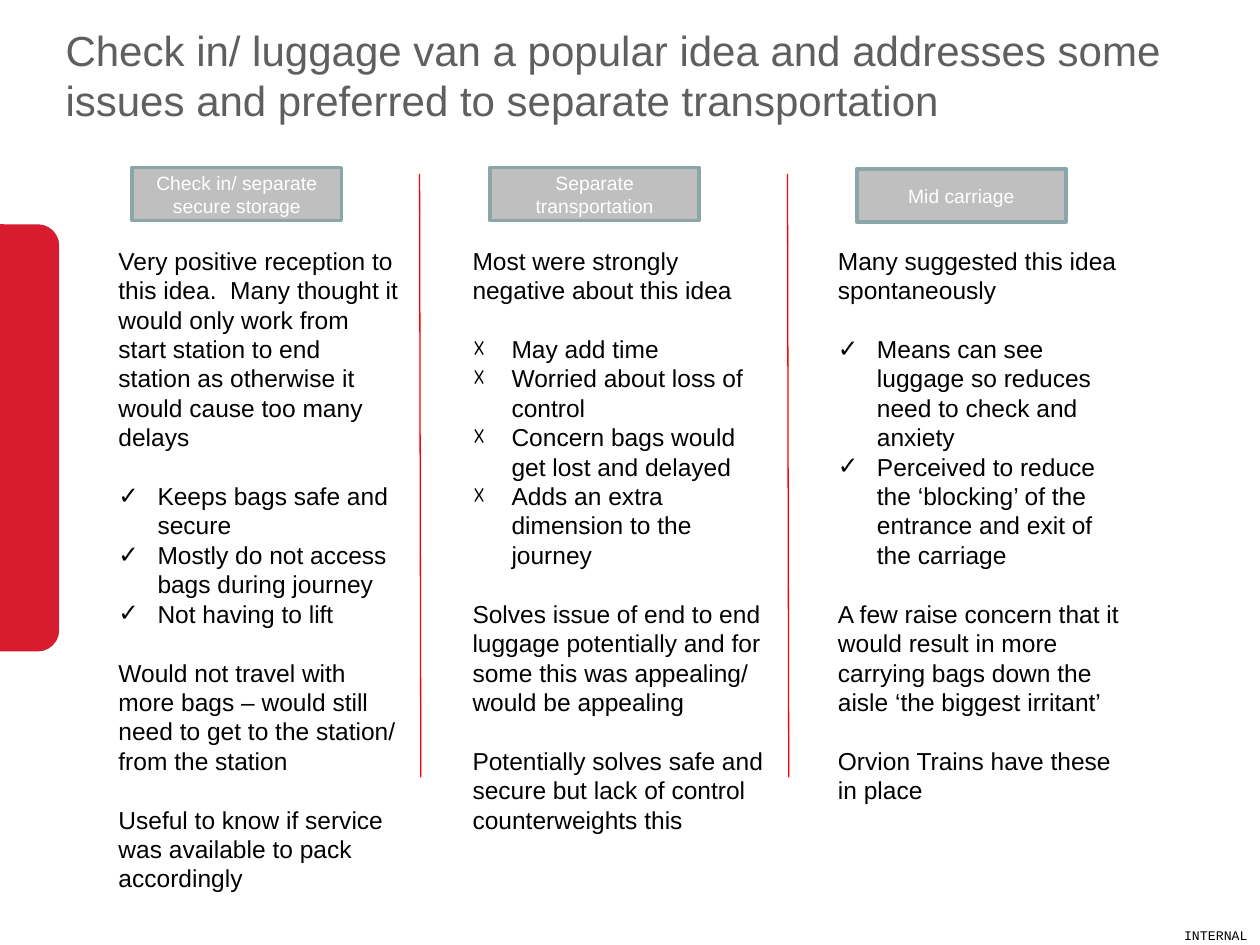
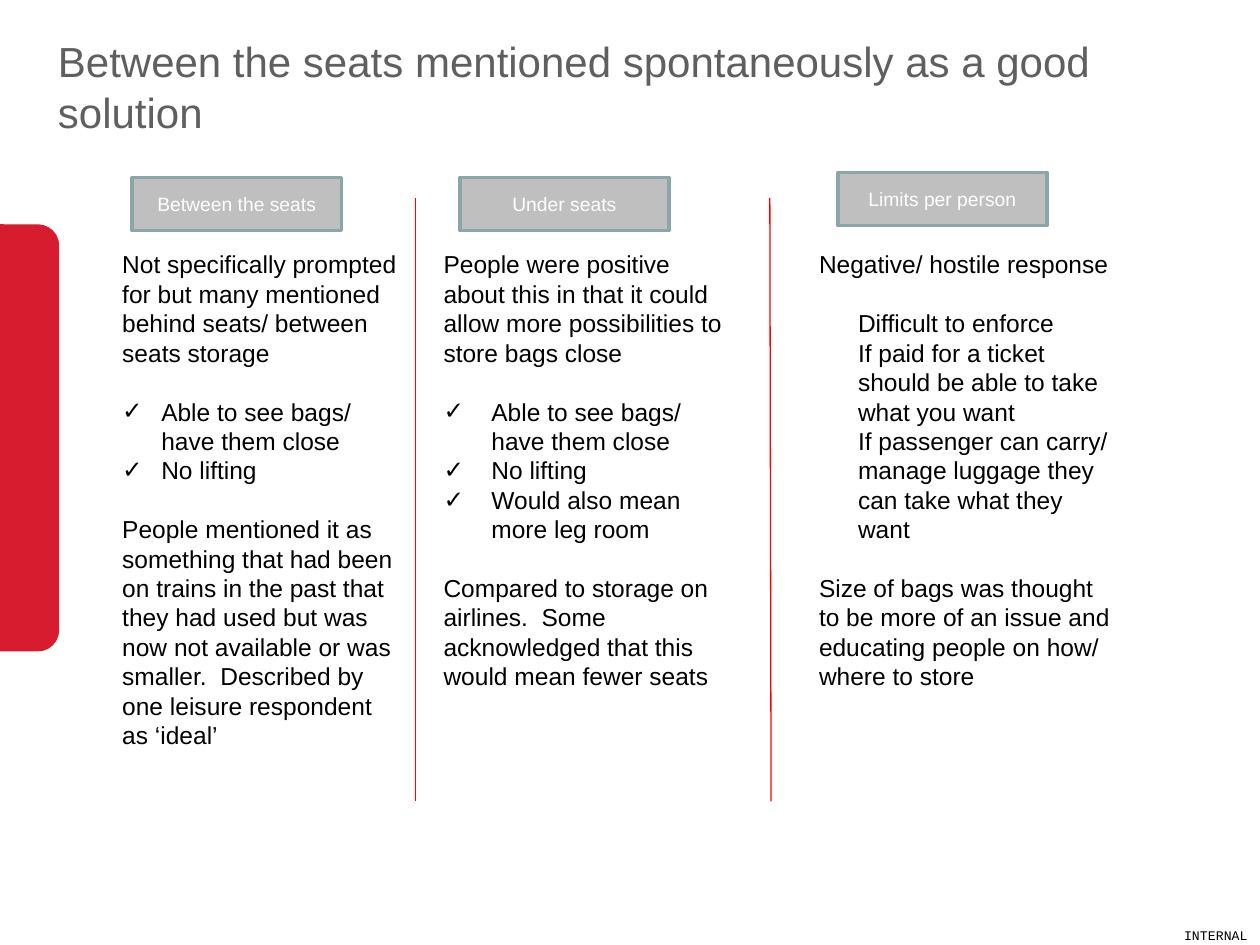
from dataclasses import dataclass

from lxml import etree
from pptx import Presentation
from pptx.dml.color import RGBColor
from pptx.enum import shapes, text
from pptx.oxml.ns import qn
from pptx.util import Inches, Pt


@dataclass(frozen=True)
class Theme:
    grey: str = "5F5F5F"
    black: str = "000000"
    white: str = "FFFFFF"
    red: str = "D61C2E"
    rule: str = "FF0000"
    label: str = "BFBFBF"
    border: str = "8AA6A8"
    sans: str = "Arial"
    mono: str = "Courier New"
    title: float = 24
    body: float = 14
    small: float = 11
    footer: float = 7.5
    leading: float = 1.2


@dataclass
class Points:
    items: list
    mark: str = ""
    indent: float = 0.31


@dataclass
class Column:
    label: str
    label_at: tuple
    body_at: tuple
    blocks: list


T = Theme()
LABEL_SIZE = (1.66, 0.42)
TICK, CROSS = "✓", "☓"


def rgb(value):
    return RGBColor.from_string(value)


def place(sp, x, y, w, h):
    sp.left, sp.top, sp.width, sp.height = (Inches(v) for v in (x, y, w, h))


def set_bullet(p, mark, indent):
    pPr = p._p.get_or_add_pPr()
    pPr.set("marL", str(Inches(indent)))
    pPr.set("indent", str(-Inches(indent) if mark else 0))
    if mark:
        etree.SubElement(pPr, qn("a:buFont")).set("typeface", T.sans)
        etree.SubElement(pPr, qn("a:buChar")).set("char", mark)
    else:
        etree.SubElement(pPr, qn("a:buNone"))


def write(tf, words, size=T.body, color=T.black, font=T.sans,
          align=text.PP_ALIGN.LEFT, mark="", indent=0, before=0):
    """Write one paragraph, using the empty first one if there is one."""
    p = tf.paragraphs[0] if not tf.text else tf.add_paragraph()
    set_bullet(p, mark, indent)
    p.alignment = align
    p.line_spacing = Pt(size * T.leading)
    p.space_before, p.space_after = Pt(before), Pt(0)
    r = p.add_run()
    r.text = words
    r.font.size, r.font.name, r.font.bold = Pt(size), font, False
    r.font.color.rgb = rgb(color)


def set_frame(tf, anchor):
    tf.word_wrap = True
    tf.auto_size = text.MSO_AUTO_SIZE.NONE
    tf.vertical_anchor = anchor


def add_block(slide, kind, at, fill, border=None):
    sp = slide.shapes.add_shape(kind, *(Inches(v) for v in at))
    sp.shadow.inherit = False
    sp.fill.solid()
    sp.fill.fore_color.rgb = rgb(fill)
    if border:
        sp.line.color.rgb, sp.line.width = rgb(border), Pt(2)
    else:
        sp.line.fill.background()
    return sp


def add_master_parts(prs, slide):
    """Draw the side band and footer, then move them to the slide master."""
    band = add_block(slide, shapes.MSO_SHAPE.ROUNDED_RECTANGLE,
                     (-0.55, 1.78, 1.02, 3.39), T.red)
    footer = slide.shapes.add_textbox(0, 0, 0, 0)
    place(footer, 0, 7.31, 10, 0.23)
    set_frame(footer.text_frame, text.MSO_ANCHOR.TOP)
    write(footer.text_frame, "INTERNAL", size=T.footer, font=T.mono,
          align=text.PP_ALIGN.RIGHT)
    for number, sp in enumerate((band, footer), start=20):
        sp._element.nvSpPr.cNvPr.set("id", str(number))
        prs.slide_master.shapes._spTree.append(sp._element)


def add_title(slide, words, x, y):
    sp = slide.shapes.title
    place(sp, x, y, 9, 1.01)
    set_frame(sp.text_frame, text.MSO_ANCHOR.MIDDLE)
    write(sp.text_frame, words, size=T.title, color=T.grey)


def add_column(slide, body, column):
    label = add_block(slide, shapes.MSO_SHAPE.RECTANGLE,
                      column.label_at + LABEL_SIZE, T.label, T.border)
    set_frame(label.text_frame, text.MSO_ANCHOR.MIDDLE)
    write(label.text_frame, column.label, size=T.small, color=T.white,
          align=text.PP_ALIGN.CENTER)

    place(body, *column.body_at)
    tf = body.text_frame
    set_frame(tf, text.MSO_ANCHOR.TOP)
    for i, block in enumerate(column.blocks):
        points = block if isinstance(block, Points) else Points([block], indent=0)
        for j, item in enumerate(points.items):
            gap = T.body * T.leading if i and not j else 0
            write(tf, item, mark=points.mark, indent=points.indent, before=gap)


def add_divider(slide, x, y, drift, height=4.79):
    line = slide.shapes.add_connector(
        shapes.MSO_CONNECTOR.STRAIGHT, Inches(x), Inches(y),
        Inches(x + drift), Inches(y + height))
    line.line.color.rgb, line.line.width = rgb(T.rule), Pt(0.75)
    etree.SubElement(line._element.spPr, qn("a:effectLst"))


def add_columns_slide(prs, title, title_at, columns, dividers):
    slide = prs.slides.add_slide(prs.slide_layouts.get_by_name("Comparison"))
    add_title(slide, title, *title_at)
    bodies = [sp for sp in slide.placeholders if sp.placeholder_format.idx]
    for body, column in zip(bodies, columns):
        add_column(slide, body, column)
    for spare in bodies[len(columns):]:
        spare._element.getparent().remove(spare._element)
    for divider in dividers:
        add_divider(slide, *divider)
    return slide


STORAGE = [
    Column("Check in/ separate secure storage", (1.05, 1.33), (0.84, 1.9, 2.43, 5.05), [
        "Very positive reception to this idea.  Many thought it would only work from "
        "start station to end station as otherwise it would cause too many delays",
        Points(["Keeps bags safe and secure",
                "Mostly do not access bags during journey",
                "Not having to lift"], TICK),
        "Would not travel with more bags – would still need to get to the station/ "
        "from the station",
        "Useful to know if service was available to pack accordingly"]),
    Column("Separate transportation", (3.89, 1.33), (3.65, 1.9, 2.53, 4.81), [
        "Most were strongly negative about this idea",
        Points(["May add time",
                "Worried about loss of control",
                "Concern bags would get lost and delayed",
                "Adds an extra dimension to the journey"], CROSS),
        "Solves issue of end to end luggage potentially and for some this was "
        "appealing/ would be appealing",
        "Potentially solves safe and secure but lack of control counterweights this"]),
    Column("Mid carriage", (6.8, 1.34), (6.55, 1.9, 2.53, 4.58), [
        "Many suggested this idea spontaneously",
        Points(["Means can see luggage so reduces need to check and anxiety",
                "Perceived to reduce the ‘blocking’ of the entrance and exit of "
                "the carriage"], TICK),
        "A few raise concern that it would result in more carrying bags down the "
        "aisle ‘the biggest irritant’",
        "Orvion Trains have these in place"]),
]

SEATS = [
    Column("Between the seats", (1.05, 1.41), (0.87, 1.93, 2.43, 4.11), [
        "Not specifically prompted for but many mentioned behind seats/ between "
        "seats storage",
        Points(["Able to see bags/ have them close", "No lifting"], TICK),
        "People mentioned it as something that had been on trains in the past that "
        "they had used but was now not available or was smaller.  Described by one "
        "leisure respondent as ‘ideal’"]),
    Column("Under seats", (3.65, 1.41), (3.42, 1.93, 2.53, 3.87), [
        "People were positive about this in that it could allow more possibilities "
        "to store bags close",
        Points(["Able to see bags/ have them close", "No lifting",
                "Would also mean more leg room"], TICK, 0.38),
        "Compared to storage on airlines.  Some acknowledged that this would mean "
        "fewer seats"]),
    Column("Limits per person", (6.65, 1.37), (6.4, 1.93, 2.53, 3.64), [
        "Negative/ hostile response",
        Points(["Difficult to enforce",
                "If paid for a ticket should be able to take what you want",
                "If passenger can carry/ manage luggage they can take what they want"]),
        "Size of bags was thought to be more of an issue and educating people on "
        "how/ where to store"]),
]


def main():
    prs = Presentation()
    prs.slide_width, prs.slide_height = Inches(10), Inches(7.5)
    first = add_columns_slide(
        prs, "Check in/ luggage van a popular idea and addresses some issues and "
        "preferred to separate transportation", (0.42, 0.09), STORAGE,
        [(3.33, 1.38, 0.01), (6.25, 1.38, 0.01)])
    add_master_parts(prs, first)
    add_columns_slide(
        prs, "Between the seats mentioned spontaneously as a good solution",
        (0.36, 0.18), SEATS, [(3.3, 1.57, 0), (6.11, 1.57, 0.01)])
    prs.save("out.pptx")


if __name__ == "__main__":
    main()
